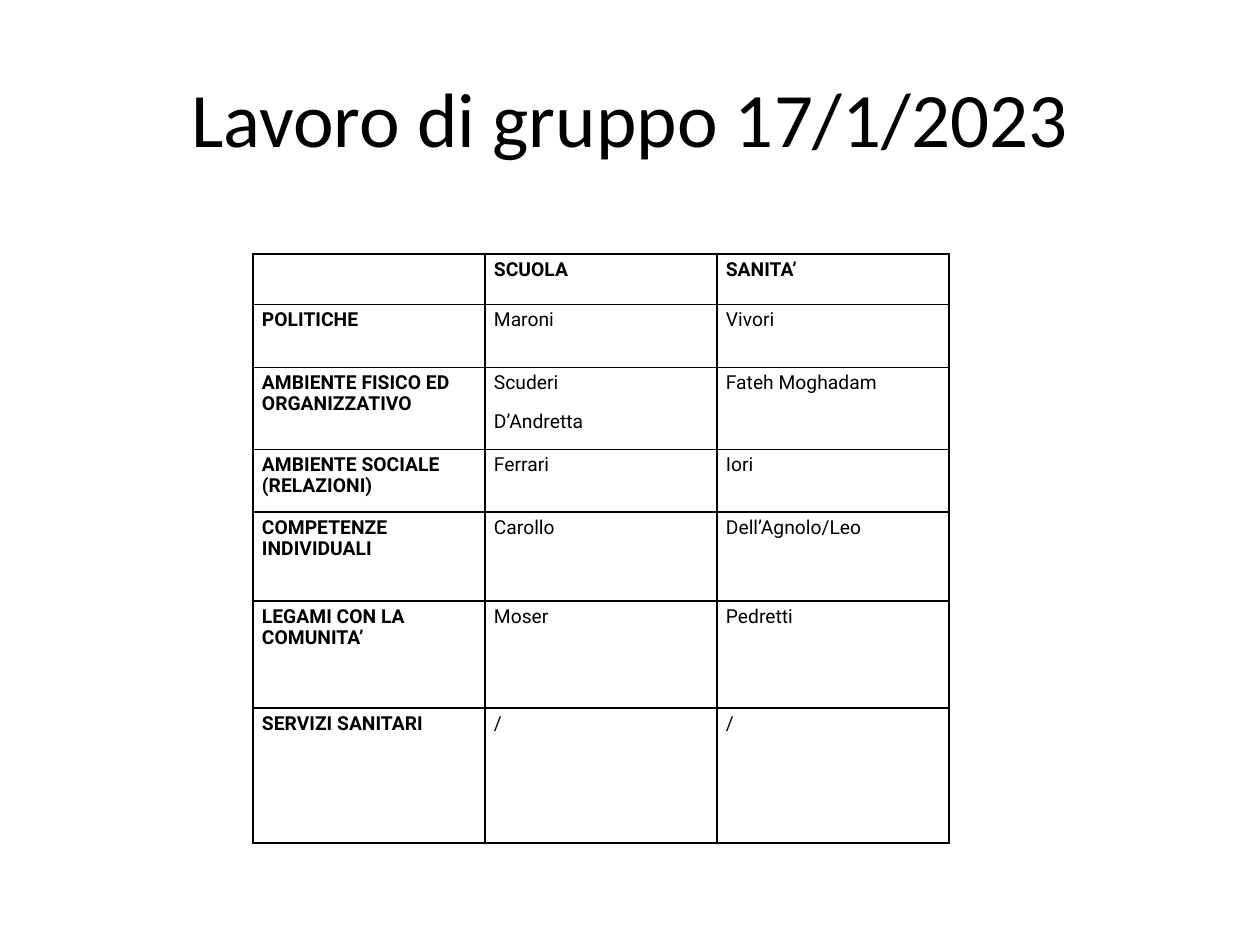
"""Build the group-work slide with its table of schools and health contacts."""
from lxml import etree
from pptx import Presentation
from pptx import util as u
from pptx.dml.color import RGBColor
from pptx.enum import text
from pptx.oxml import ns

PX = u.Inches(1) // 126
BLACK = RGBColor(0, 0, 0)
COLUMN_WIDTH = 232
ROW_HEIGHTS = [39, 63, 82, 63, 89, 107, 135]
ROWS = [
    ["", "SCUOLA", "SANITA’"],
    ["POLITICHE", "Maroni", "Vivori"],
    ["AMBIENTE FISICO ED ORGANIZZATIVO", "Scuderi\nD’Andretta", "Fateh Moghadam"],
    ["AMBIENTE SOCIALE (RELAZIONI)", "Ferrari", "Iori"],
    ["COMPETENZE INDIVIDUALI", "Carollo", "Dell’Agnolo/Leo"],
    ["LEGAMI CON LA COMUNITA’", "Moser", "Pedretti"],
    ["SERVIZI SANITARI", "/", "/"],
]


def add_borders(cell):
    properties = cell._tc.get_or_add_tcPr()
    for position, side in enumerate(["lnL", "lnR", "lnT", "lnB"]):
        line = etree.Element(ns.qn(f"a:{side}"), w=str(u.Pt(0.96)))
        fill = etree.SubElement(line, ns.qn("a:solidFill"))
        etree.SubElement(fill, ns.qn("a:srgbClr"), val=str(BLACK))
        properties.insert(position, line)


def format_font(font, name, size, bold):
    font.name = name
    font.size = u.Pt(size)
    font.bold = bold
    font.color.rgb = BLACK


presentation = Presentation()
presentation.slide_width = 1260 * PX
presentation.slide_height = 945 * PX
slide = presentation.slides.add_slide(presentation.slide_layouts[5])

title = slide.shapes.title
title.left, title.top, title.width, title.height = [n * PX for n in (63, 38, 1134, 157)]
title.text_frame.text = "Lavoro di gruppo 17/1/2023"
title.text_frame.vertical_anchor = text.MSO_ANCHOR.MIDDLE
title_paragraph = title.text_frame.paragraphs[0]
title_paragraph.alignment = text.PP_ALIGN.CENTER
format_font(title_paragraph.runs[0].font, "Calibri", 44, False)

table = slide.shapes.add_table(
    len(ROWS), len(ROWS[0]), 253 * PX, 254 * PX,
    COLUMN_WIDTH * len(ROWS[0]) * PX, sum(ROW_HEIGHTS) * PX,
).table
table.first_row = table.horz_banding = False
for column in table.columns:
    column.width = COLUMN_WIDTH * PX

for row_index, (row, height) in enumerate(zip(ROWS, ROW_HEIGHTS)):
    table.rows[row_index].height = height * PX
    for column_index, wording in enumerate(row):
        cell = table.cell(row_index, column_index)
        cell.fill.background()
        cell.margin_left = cell.margin_right = 9 * PX
        cell.margin_top = cell.margin_bottom = 6 * PX
        add_borders(cell)
        cell.text_frame.text = wording
        for paragraph in cell.text_frame.paragraphs:
            paragraph.line_spacing = u.Pt(12)
            paragraph.space_after = u.Pt(10)
            for run in paragraph.runs:
                format_font(run.font, "Roboto", 11, row_index == 0 or column_index == 0)

presentation.save("out.pptx")
